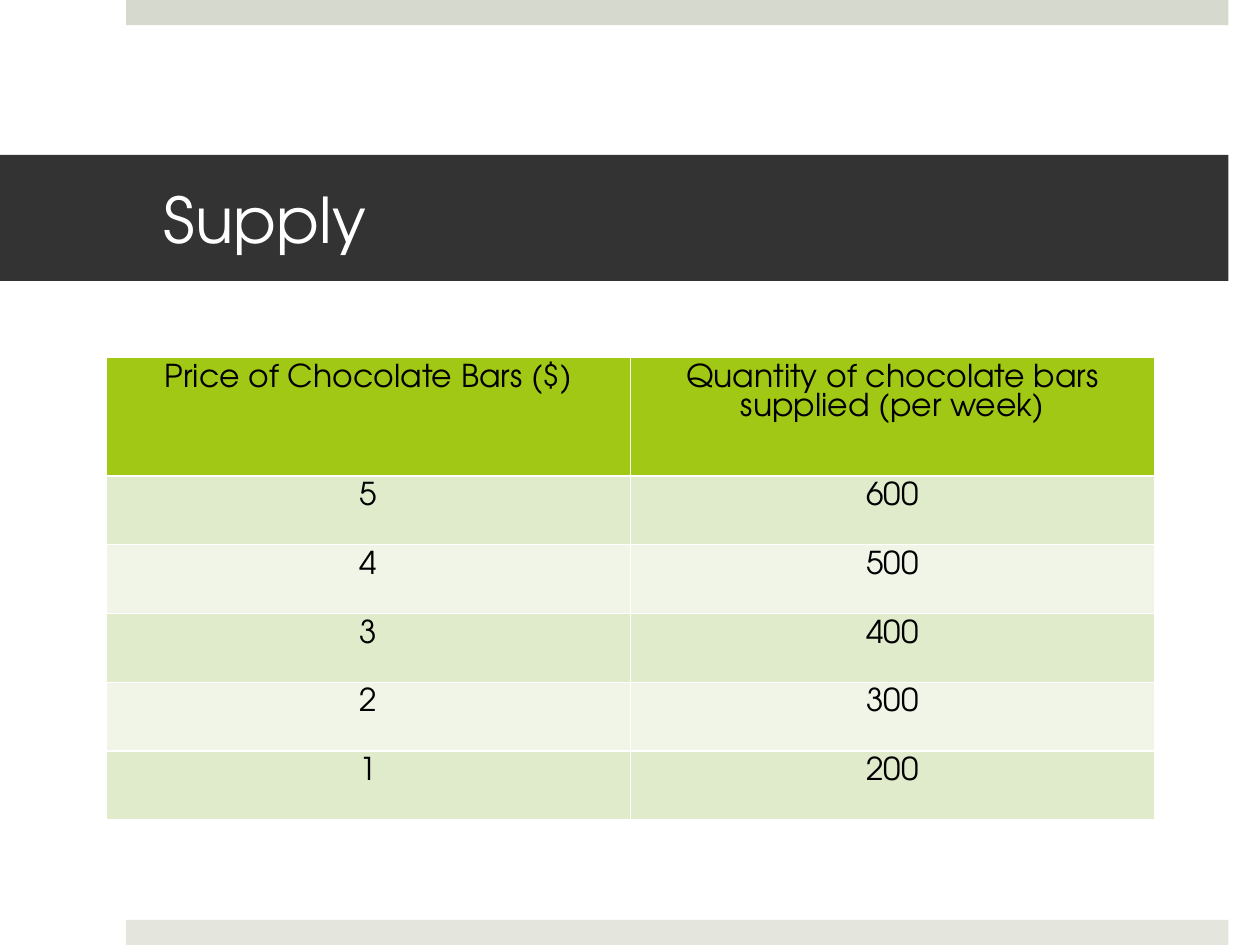
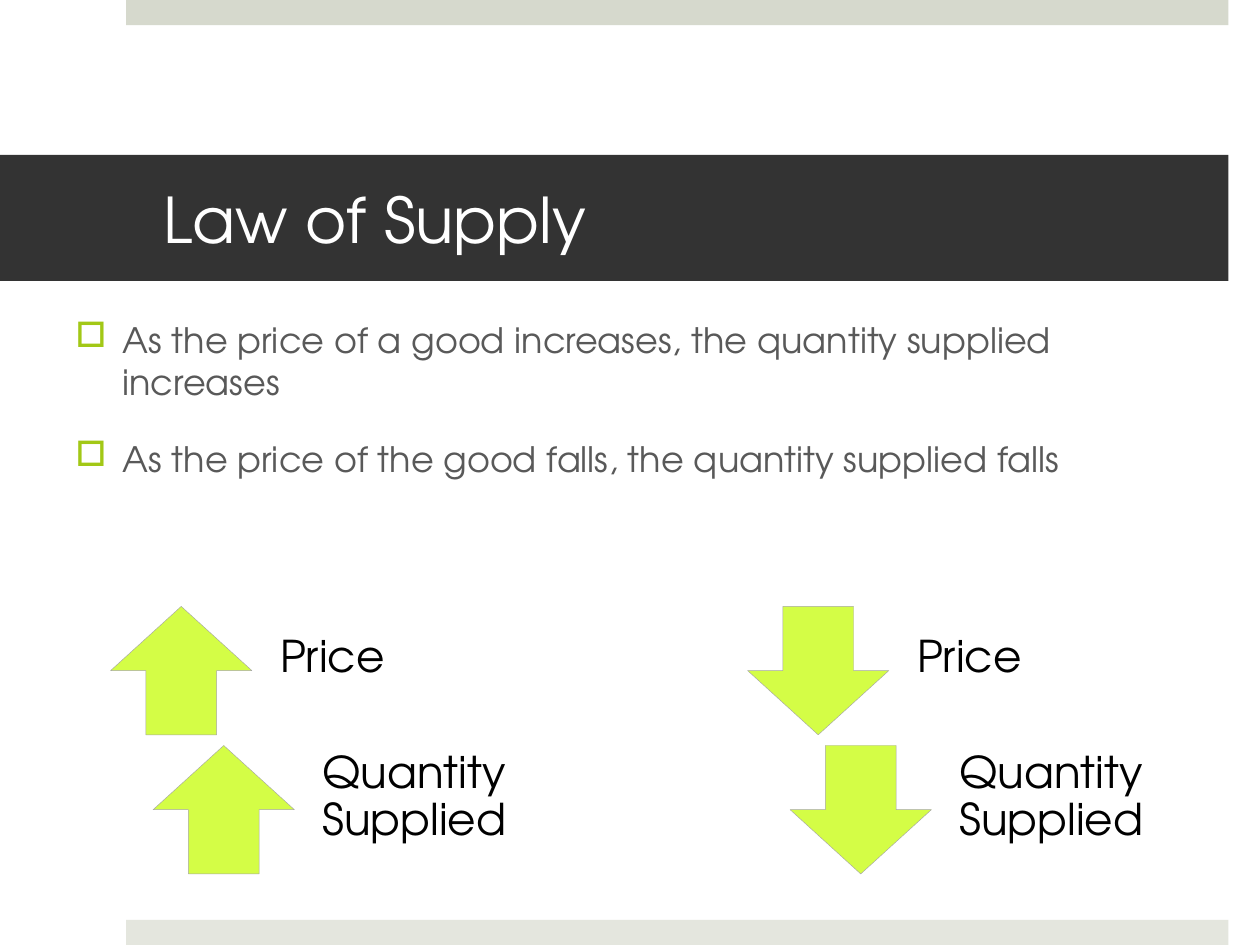
"""Build two slides on supply: a schedule table and the law of supply."""
from lxml.etree import SubElement
from pptx import Presentation
from pptx.dml.color import RGBColor
from pptx.enum.shapes import MSO_SHAPE
from pptx.enum.text import MSO_ANCHOR, PP_ALIGN
from pptx.oxml.ns import qn
from pptx.util import Pt

FONT = "TeX Gyre Adventor"
WHITE = RGBColor(0xFF, 0xFF, 0xFF)
BLACK = RGBColor(0x00, 0x00, 0x00)
CHARCOAL = RGBColor(0x33, 0x33, 0x33)
BODY_GREY = RGBColor(0x59, 0x59, 0x59)
GREEN = RGBColor(0xA2, 0xC8, 0x16)
LIME = RGBColor(0xD4, 0xFD, 0x46)
ARROW_EDGE = RGBColor(0xA6, 0xA6, 0xA6)
ROW_TINTS = (RGBColor(0xE0, 0xEB, 0xCC), RGBColor(0xF0, 0xF5, 0xE8))

EDGE_BANDS = ((0, RGBColor(0xD6, 0xD9, 0xCD)), (525.6, RGBColor(0xE4, 0xE6, 0xDE)))
SUPPLY_TITLE = "Supply"
SUPPLY_ROWS = [
    ("Price of Chocolate Bars ($)", "Quantity of chocolate bars supplied (per week)"),
    ("5", "600"),
    ("4", "500"),
    ("3", "400"),
    ("2", "300"),
    ("1", "200"),
]
LAW_TITLE = "Law of Supply"
LAW_POINTS = [
    "As the price of a good increases, the quantity supplied increases",
    "As the price of the good falls, the quantity supplied falls",
]
ARROW_LABELS = ("Price", "Quantity Supplied")
ARROW_GROUPS = ((63.2, MSO_SHAPE.UP_ARROW), (427.2, MSO_SHAPE.DOWN_ARROW))
ARROW_TOP, ARROW_WIDTH, ARROW_HEIGHT = 346.5, 80.7, 73.4
STEP_RIGHT, STEP_DOWN = 24.3, 79.5
LABEL_OFFSET, LABEL_WIDTH = 83.2, 136.8

TITLE_STYLE = {"size": Pt(36), "color": WHITE}
TABLE_STYLE = {"size": Pt(18), "color": BLACK}
BODY_STYLE = {"size": Pt(20), "color": BODY_GREY}
LABEL_STYLE = {"size": Pt(25), "color": BLACK}
TABLE_FORMAT = {"alignment": PP_ALIGN.CENTER}
BODY_FORMAT = {"alignment": PP_ALIGN.LEFT, "space_before": Pt(20)}
LABEL_FORMAT = {"alignment": PP_ALIGN.LEFT, "line_spacing": 0.9, "space_after": Pt(8.75)}


def points(*lengths):
    return [Pt(length) for length in lengths]


def set_attributes(target, values):
    for name, value in values.items():
        setattr(target, name, value)


def write(paragraph, text, style, paragraph_format):
    set_attributes(paragraph, paragraph_format)
    run = paragraph.add_run()
    run.text = text
    run.font.name = FONT
    run.font.size = style["size"]
    run.font.color.rgb = style["color"]


def set_frame(frame, anchor, insets):
    sides = ("margin_left", "margin_top", "margin_right", "margin_bottom")
    set_attributes(frame, dict(zip(sides, points(*insets))))
    set_attributes(frame, {"word_wrap": True, "vertical_anchor": anchor})


def add_filled(slide, kind, box, color, edge=None):
    shape = slide.shapes.add_shape(kind, *points(*box))
    shape.shadow.inherit = False
    shape.fill.solid()
    shape.fill.fore_color.rgb = color
    if edge is None:
        shape.line.fill.background()
    else:
        shape.line.color.rgb = edge
        shape.line.width = Pt(0.25)
    return shape


def add_base_slide(presentation, title):
    slide = presentation.slides.add_slide(presentation.slide_layouts[6])
    for top, color in EDGE_BANDS:
        add_filled(slide, MSO_SHAPE.RECTANGLE, (72, top, 630, 14.4), color)
    band = add_filled(slide, MSO_SHAPE.RECTANGLE, (0, 88.5, 702, 72), CHARCOAL)
    set_frame(band.text_frame, MSO_ANCHOR.MIDDLE, (93.6, 3.6, 21.6, 3.6))
    write(band.text_frame.paragraphs[0], title, TITLE_STYLE, {"alignment": PP_ALIGN.LEFT})
    return slide


def add_color(parent, color):
    SubElement(parent, qn("a:srgbClr"), val=str(color))


def set_borders(cell):
    properties = cell._tc.get_or_add_tcPr()
    for side in ("lnL", "lnR", "lnT", "lnB"):
        line = SubElement(properties, qn(f"a:{side}"), w=str(Pt(1)))
        add_color(SubElement(line, qn("a:solidFill")), WHITE)


def add_supply_table(slide):
    row_heights = [67.6] + [39.36] * (len(SUPPLY_ROWS) - 1)
    box = points(60.8, 204.3, 599, sum(row_heights))
    table = slide.shapes.add_table(len(SUPPLY_ROWS), 2, *box).table
    for row_index, texts in enumerate(SUPPLY_ROWS):
        table.rows[row_index].height = Pt(row_heights[row_index])
        color = ROW_TINTS[(row_index - 1) % 2] if row_index else GREEN
        for column_index, text in enumerate(texts):
            cell = table.cell(row_index, column_index)
            set_borders(cell)
            cell.fill.solid()
            cell.fill.fore_color.rgb = color
            write(cell.text_frame.paragraphs[0], text, TABLE_STYLE, TABLE_FORMAT)


def set_bullet(paragraph):
    properties = paragraph._p.get_or_add_pPr()
    properties.set("marL", str(Pt(27)))
    properties.set("indent", str(Pt(-27)))
    add_color(SubElement(properties, qn("a:buClr")), GREEN)
    SubElement(properties, qn("a:buChar"), char="□")


def add_law_points(slide):
    frame = slide.shapes.add_textbox(*points(36, 178.5, 648, 188.6)).text_frame
    set_frame(frame, MSO_ANCHOR.TOP, (7.2, 3.6, 7.2, 3.6))
    for index, text in enumerate(LAW_POINTS):
        paragraph = frame.add_paragraph() if index else frame.paragraphs[0]
        write(paragraph, text, BODY_STYLE, BODY_FORMAT)
        set_bullet(paragraph)


def add_arrow_groups(slide):
    for group_left, arrow_kind in ARROW_GROUPS:
        for step, label in enumerate(ARROW_LABELS):
            left = group_left + step * STEP_RIGHT
            top = ARROW_TOP + step * STEP_DOWN
            add_filled(slide, arrow_kind, (left, top, ARROW_WIDTH, ARROW_HEIGHT), LIME, ARROW_EDGE)
            label_box = points(left + LABEL_OFFSET, top, LABEL_WIDTH, ARROW_HEIGHT)
            frame = slide.shapes.add_textbox(*label_box).text_frame
            set_frame(frame, MSO_ANCHOR.MIDDLE, (13.7, 0, 13.7, 13.7))
            write(frame.paragraphs[0], label, LABEL_STYLE, LABEL_FORMAT)


def main():
    presentation = Presentation()
    presentation.slide_width, presentation.slide_height = points(720, 540)
    add_supply_table(add_base_slide(presentation, SUPPLY_TITLE))
    law_slide = add_base_slide(presentation, LAW_TITLE)
    add_law_points(law_slide)
    add_arrow_groups(law_slide)
    presentation.save("out.pptx")


if __name__ == "__main__":
    main()
